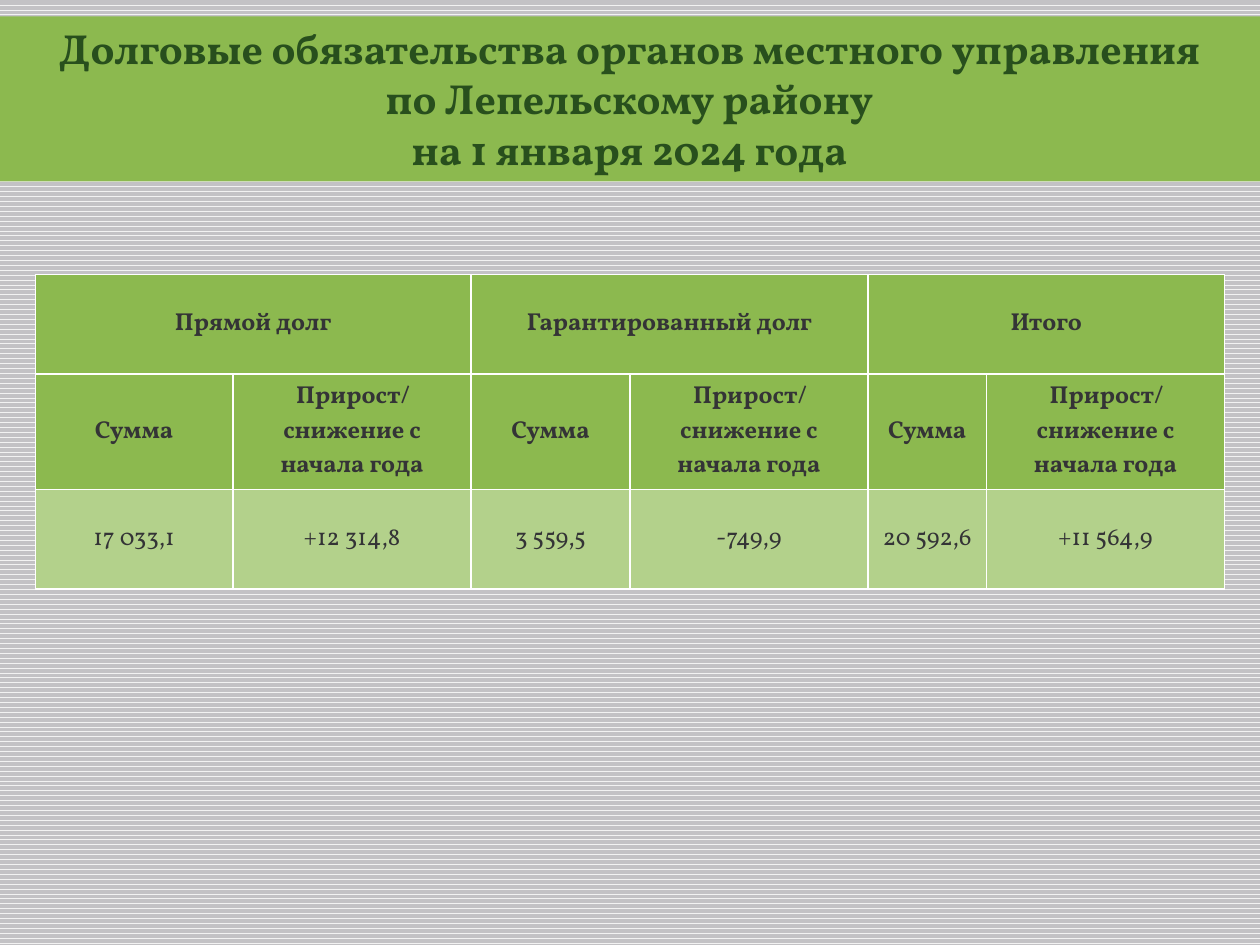
from lxml import etree
from pptx import Presentation
from pptx.dml.color import RGBColor
from pptx.enum.dml import MSO_PATTERN
from pptx.enum.shapes import MSO_SHAPE
from pptx.enum.text import MSO_ANCHOR, PP_ALIGN
from pptx.oxml import parse_xml
from pptx.util import Inches, Pt

RECT = MSO_SHAPE.RECTANGLE
WAVE = MSO_PATTERN.WAVE
TOP, MIDDLE = MSO_ANCHOR.TOP, MSO_ANCHOR.MIDDLE
CENTER = PP_ALIGN.CENTER
GREEN = RGBColor(0x8C, 0xB9, 0x4F)
PALE = RGBColor(0xB3, 0xD1, 0x8B)
DARK = RGBColor(0x28, 0x4F, 0x1D)
INK = RGBColor(0x34, 0x34, 0x36)
LIGHT = RGBColor(0xF2, 0xF2, 0xF2)
GRAY = RGBColor(0xC3, 0xC2, 0xC5)
FONT = "Vollkorn"
NS = "http://schemas.openxmlformats.org/drawingml/2006/main"


def write(frame, text, size=14, color=INK, bold=True):
    """Fill a text frame with one centred paragraph per line of text."""
    for i, line in enumerate(text.split("\n")):
        par = frame.add_paragraph() if i else frame.paragraphs[0]
        par.alignment = CENTER
        run = par.add_run()
        run.text = line
        run.font.name = FONT
        run.font.size = Pt(size)
        run.font.bold = bold
        run.font.color.rgb = color


def edge(cell):
    """Draw white 1 pt borders; they must come before the fill in tcPr."""
    props = cell._tc.get_or_add_tcPr()
    for i, side in enumerate("LRTB"):
        line = parse_xml(f'<a:ln{side} xmlns:a="{NS}" w="{Pt(1)}"/>')
        fill = etree.SubElement(line, f"{{{NS}}}solidFill")
        etree.SubElement(fill, f"{{{NS}}}srgbClr", val="FFFFFF")
        props.insert(i, line)


prs = Presentation()
prs.slide_width, prs.slide_height = Inches(10), Inches(7.5)
slide = prs.slides.add_slide(prs.slide_layouts[6])

back = slide.background.fill
back.patterned()
back.pattern = WAVE
back.fore_color.rgb = LIGHT
back.back_color.rgb = GRAY

# Debt table: three groups, each with a sum and a change
widths = [1.57, 1.89, 1.26, 1.89, 0.94, 1.89]
groups = ["Прямой долг", "Гарантированный долг", "Итого"]
rows = [
    [text for group in groups for text in (group, "")],
    ["Сумма", "Прирост/снижение с начала года"] * len(groups),
    ["17 033,1", "+12 314,8", "3 559,5", "-749,9", "20 592,6", "+11 564,9"],
]
table = slide.shapes.add_table(
    len(rows), len(widths), Inches(0.28), Inches(2.18), Inches(9.45), Inches(2.36)
).table
for col, width in zip(table.columns, widths):
    col.width = Inches(width)
for c in range(0, len(widths), 2):
    table.cell(0, c).merge(table.cell(0, c + 1))

for r, row in enumerate(rows):
    table.rows[r].height = Inches(0.79)
    head = r < 2
    for c, text in enumerate(row):
        cell = table.cell(r, c)
        cell.fill.solid()
        cell.fill.fore_color.rgb = GREEN if head else PALE
        cell.vertical_anchor = MIDDLE
        edge(cell)
        if text:
            write(cell.text_frame, text, bold=head)

# Title band
band = slide.shapes.add_shape(RECT, Inches(-0.01), Inches(0.13), Inches(10.01), Inches(1.31))
band.shadow.inherit = False
band.fill.solid()
band.fill.fore_color.rgb = GREEN
band.line.fill.background()
band.text_frame.word_wrap = True
band.text_frame.vertical_anchor = TOP
title = (
    "Долговые обязательства органов местного управления\n"
    "по Лепельскому району\n"
    "на 1 января 2024 года"
)
write(band.text_frame, title, size=24, color=DARK)

prs.save("out.pptx")
